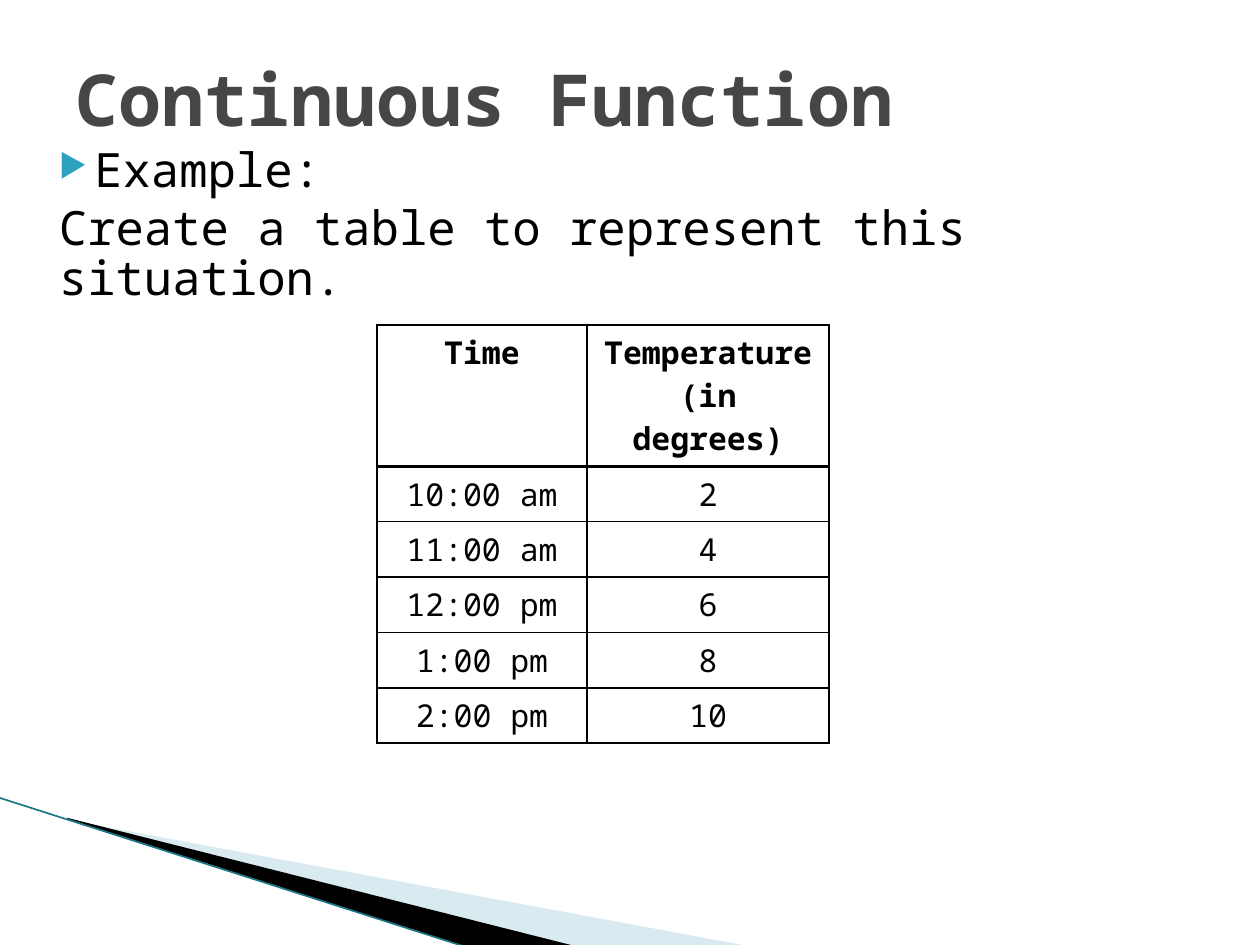
import pptx
import pptx.util
import pptx.dml.color
import pptx.enum.shapes
import pptx.enum.text
import pptx.oxml
import pptx.oxml.ns

RGB = pptx.dml.color.RGBColor
BLACK = RGB(0x00, 0x00, 0x00)
GREY = RGB(0x46, 0x46, 0x46)
TEAL = RGB(0x2D, 0xA2, 0xBF)
DARK_TEAL = RGB(0x1B, 0x75, 0x87)
PALE_BLUE = RGB(0xA0, 0xCB, 0xDC)

ANCHOR = pptx.enum.text.MSO_ANCHOR
ALIGN = pptx.enum.text.PP_ALIGN
NS = pptx.oxml.ns.nsdecls("a")
COLUMNS, ROWS = 100, 75


def element(xml):
    return pptx.oxml.parse_xml(xml.replace(">", f" {NS}>", 1))


class Deck:
    font = "Noto Sans Mono"

    def __init__(self):
        self.prs = pptx.Presentation()
        self.prs.slide_width = pptx.util.Inches(10)
        self.prs.slide_height = pptx.util.Inches(7.5)
        self.s = self.prs.slides.add_slide(self.prs.slide_layouts[6])

    def x(self, columns):
        return round(self.prs.slide_width * columns / COLUMNS)

    def y(self, rows):
        return round(self.prs.slide_height * rows / ROWS)

    def box(self, left, top, width, height):
        return self.x(left), self.y(top), self.x(width), self.y(height)

    def run(self, p, text, size, color=BLACK, bold=False):
        r = p.add_run()
        r.text = text
        values = {"name": self.font, "size": pptx.util.Pt(size), "bold": bold}
        for name, value in values.items():
            setattr(r.font, name, value)
        r.font.color.rgb = color

    def text_frame(self, box, **values):
        tf = self.s.shapes.add_textbox(*self.box(*box)).text_frame
        for name, value in {"word_wrap": True, **values}.items():
            setattr(tf, name, value)
        return tf

    def title(self, text, box):
        tf = self.text_frame(box, vertical_anchor=ANCHOR.MIDDLE)
        self.run(tf.paragraphs[0], text, 41, GREY, True)

    def body(self, bulleted, plain, box):
        tf = self.text_frame(box, margin_top=pptx.util.Inches(0.09))
        first, second = tf.paragraphs[0], tf.add_paragraph()
        second.space_before = pptx.util.Pt(4)
        for p, text, left, indent in ((first, bulleted, 4, -2.8), (second, plain, 1.2, 0)):
            p.line_spacing = 0.89
            pPr = p._p.get_or_add_pPr()
            pPr.set("marL", str(self.x(left)))
            pPr.set("indent", str(self.x(indent)))
            self.run(p, text, 27)
        for xml in (
            f'<a:buClr><a:srgbClr val="{TEAL}"/></a:buClr>',
            '<a:buSzPct val="68000"></a:buSzPct>',
            '<a:buChar char="▶"></a:buChar>',
        ):
            first._p.get_or_add_pPr().append(element(xml))

    def wedge(self, points, color, alpha=None):
        start, *rest = [(self.x(x), self.y(y)) for x, y in points]
        builder = self.s.shapes.build_freeform(*start)
        builder.add_line_segments(rest, close=True)
        sp = builder.convert_to_shape()
        sp.shadow.inherit = False
        sp.fill.solid()
        sp.fill.fore_color.rgb = color
        sp.line.fill.background()
        if alpha:
            clr = sp._element.spPr.find(".//" + pptx.oxml.ns.qn("a:srgbClr"))
            clr.append(element(f'<a:alpha val="{alpha * 1000}"></a:alpha>'))

    def line(self, x1, y1, x2, y2, color, width):
        c = self.s.shapes.add_connector(
            pptx.enum.shapes.MSO_CONNECTOR.STRAIGHT,
            self.x(x1), self.y(y1), self.x(x2), self.y(y2))
        c.line.color.rgb = color
        c.line.width = pptx.util.Pt(width)
        c._element.spPr.append(element("<a:effectLst></a:effectLst>"))

    def borders(self, cell, widths):
        tcPr = cell._tc.get_or_add_tcPr()
        for side, width in widths.items():
            tcPr.append(element(
                f'<a:ln{side} w="{pptx.util.Pt(width)}"><a:solidFill>'
                f'<a:srgbClr val="{BLACK}"/></a:solidFill></a:ln{side}>'))

    def table(self, data, left, top, widths, heights):
        box = self.box(left, top, sum(widths), sum(heights))
        table = self.s.shapes.add_table(len(data), len(widths), *box).table
        table.first_row = table.horz_banding = False
        for column, width in zip(table.columns, widths):
            column.width = self.x(width)
        for i, (row, height, values) in enumerate(zip(table.rows, heights, data)):
            row.height = self.y(height)
            for cell, value in zip(row.cells, values):
                p = cell.text_frame.paragraphs[0]
                p.alignment = ALIGN.CENTER
                self.run(p, value, 18, bold=i == 0)
                self.borders(cell, {"L": 1, "R": 1, "T": 2 if i == 1 else 1,
                                    "B": 2 if i == 0 else 1})
                cell.fill.background()


def main():
    deck = Deck()
    deck.wedge([(5.5, 65.1), (59.5, 75.1), (45.6, 75.1), (5.5, 65)], PALE_BLUE, 40)
    deck.wedge([(5.3, 64.9), (45.7, 75.1), (37.2, 75.2), (5.4, 65)], BLACK)
    deck.line(-0.1, 63.3, 37.1, 75.2, DARK_TEAL, 0.95)
    deck.body("Example:", "Create a table to represent this situation.",
              (2.5, 10.8, 90, 60.8))
    deck.title("Continuous Function", (5, 3, 90, 9.5))
    readings = [
        ("Time", "Temperature (in degrees)"),
        ("10:00 am", "2"),
        ("11:00 am", "4"),
        ("12:00 pm", "6"),
        ("1:00 pm", "8"),
        ("2:00 pm", "10"),
    ]
    deck.table(readings, 29.9, 25.8, [16.7, 19.2], [11.2] + [4.4] * 5)
    deck.prs.save("out.pptx")


if __name__ == "__main__":
    main()
